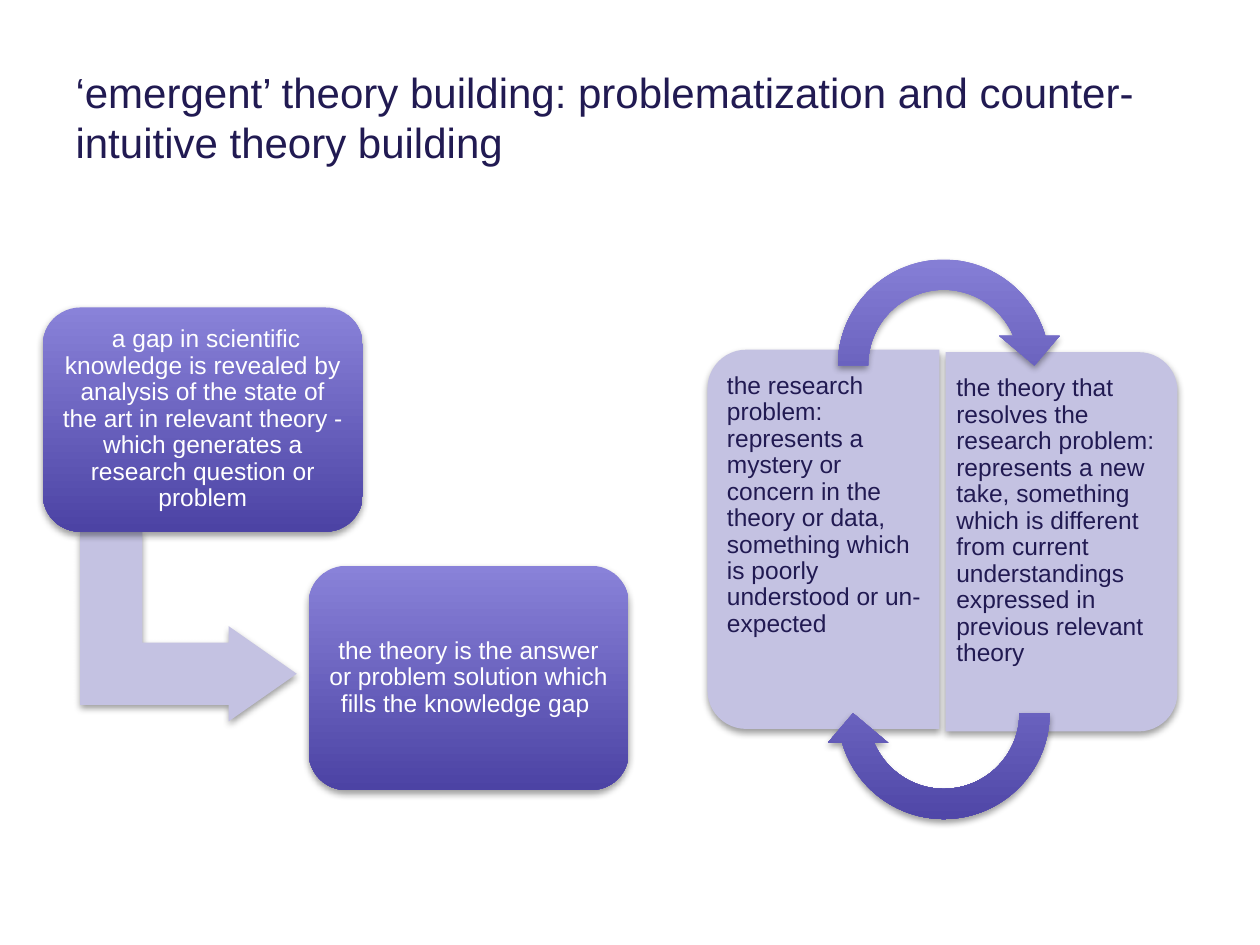
from dataclasses import dataclass

from lxml.etree import SubElement
from pptx import Presentation
from pptx.dml.color import RGBColor
from pptx.enum.shapes import MSO_SHAPE
from pptx.enum.text import MSO_ANCHOR, MSO_AUTO_SIZE, PP_ALIGN
from pptx.oxml.ns import qn
from pptx.shapes.autoshape import Shape
from pptx.slide import Slide
from pptx.text.text import TextFrame
from pptx.util import Inches, Pt

NAVY = RGBColor(0x21, 0x1A, 0x52)
WHITE = RGBColor(0xFF, 0xFF, 0xFF)
LAVENDER = RGBColor(0xC4, 0xC2, 0xE2)
LIGHT_VIOLET = RGBColor(0x89, 0x82, 0xD9)
DARK_VIOLET = RGBColor(0x4C, 0x43, 0xA4)

FONT = "Arial"
CORNER = 0.167
PANEL_LENGTH, PANEL_DEPTH = 3.01, 1.84
CYCLE_LEFT, CYCLE_SIZE = 6.53, 1.92
CYCLE_ADJUSTMENTS = (0.125, 11.423, 204.577, 108, 0.125)
CARD_WIDTH, CARD_HEIGHT, CARD_MARGIN = 2.54, 1.78, 0.09


@dataclass(frozen=True)
class Frame:
    left: float
    top: float
    width: float
    height: float

    def lengths(self) -> tuple:
        return tuple(map(Inches, (self.left, self.top, self.width, self.height)))


@dataclass(frozen=True)
class Panel:
    left: float
    top: float
    rotation: int
    text_left: float
    text_top: float
    inset_left: float
    inset_right: float
    text: str


@dataclass(frozen=True)
class Card:
    left: float
    top: float
    text: str


PANELS = (
    Panel(5.03, 3.36, 270, 5.71, 2.86, 0.06, 0.09,
          "the research problem: represents a mystery or concern in the theory "
          "or data, something which is poorly understood or un-expected"),
    Panel(6.92, 3.38, 90, 7.5, 2.88, 0.09, 0.06,
          "the theory that resolves the research problem: represents a new take, "
          "something which is different from current understandings expressed in "
          "previous relevant theory"),
)
CYCLE_ARROWS = ((1.94, 0), (4.7, 180))
CARDS = (
    Card(0.34, 2.44,
         " a gap in scientific knowledge is revealed by analysis of the state of "
         "the art in relevant theory - which generates a research question or problem"),
    Card(2.45, 4.49,
         "the theory is the answer or problem solution which fills the knowledge gap "),
)


def add_shadow(shape: Shape) -> None:
    shape.shadow.inherit = False
    effects = shape._element.spPr.find(qn("a:effectLst"))
    shadow = SubElement(effects, qn("a:outerShdw"), blurRad=str(Pt(4)), dist=str(Pt(2)),
                        dir="5400000", rotWithShape="0")
    color = SubElement(shadow, qn("a:srgbClr"), val="000000")
    SubElement(color, qn("a:alpha"), val="38000")


def add_figure(slide: Slide, kind: MSO_SHAPE, frame: Frame, adjustments: tuple,
               rotation: int = 0) -> Shape:
    shape = slide.shapes.add_shape(kind, *frame.lengths())
    for index, value in enumerate(adjustments):
        shape.adjustments[index] = value
    shape.rotation = rotation
    shape.line.fill.background()
    add_shadow(shape)
    return shape


def fill_solid(shape: Shape) -> None:
    shape.fill.solid()
    shape.fill.fore_color.rgb = LAVENDER


def fill_gradient(shape: Shape) -> None:
    shape.fill.gradient()
    shape.fill.gradient_angle = 270
    stops = zip(shape.fill.gradient_stops, (0, 1), (LIGHT_VIOLET, DARK_VIOLET))
    for stop, position, color in stops:
        stop.position = position
        stop.color.rgb = color
    shape._element.spPr.find(qn("a:gradFill")).set("rotWithShape", "0")


def write_text(text_frame: TextFrame, text: str, size: int, color: RGBColor,
               alignment: PP_ALIGN, anchor: MSO_ANCHOR) -> None:
    text_frame.word_wrap = True
    text_frame.auto_size = MSO_AUTO_SIZE.NONE
    text_frame.vertical_anchor = anchor
    para = text_frame.paragraphs[0]
    para.alignment = alignment
    span = para.add_run()
    span.text = text
    span.font.name = FONT
    span.font.size = Pt(size)
    span.font.color.rgb = color


def add_label(slide: Slide, frame: Frame, insets: tuple, text: str, color: RGBColor,
              alignment: PP_ALIGN, anchor: MSO_ANCHOR) -> None:
    text_frame = slide.shapes.add_textbox(*frame.lengths()).text_frame
    (text_frame.margin_left, text_frame.margin_top,
     text_frame.margin_right, text_frame.margin_bottom) = map(Inches, insets)
    write_text(text_frame, text, 14, color, alignment, anchor)
    text_frame.paragraphs[0].line_spacing = 0.9


def add_panel(slide: Slide, panel: Panel) -> None:
    frame = Frame(panel.left, panel.top, PANEL_LENGTH, PANEL_DEPTH)
    fill_solid(add_figure(slide, MSO_SHAPE.ROUND_2_SAME_RECTANGLE, frame,
                          (CORNER, 0), panel.rotation))
    add_label(slide, Frame(panel.text_left, panel.text_top, 1.75, 2.83),
              (panel.inset_left, 0.1, panel.inset_right, 0.1), panel.text,
              NAVY, PP_ALIGN.LEFT, MSO_ANCHOR.TOP)


def add_card(slide: Slide, card: Card) -> None:
    frame = Frame(card.left, card.top, CARD_WIDTH, CARD_HEIGHT)
    fill_gradient(add_figure(slide, MSO_SHAPE.ROUNDED_RECTANGLE, frame, (CORNER,)))
    text_area = Frame(card.left + CARD_MARGIN, card.top + CARD_MARGIN,
                      CARD_WIDTH - 2 * CARD_MARGIN, CARD_HEIGHT - 2 * CARD_MARGIN)
    add_label(slide, text_area, (0.06,) * 4, card.text,
              WHITE, PP_ALIGN.CENTER, MSO_ANCHOR.MIDDLE)


def add_title(slide: Slide) -> None:
    title = slide.shapes.title
    title.left, title.top, title.width, title.height = Frame(0.5, 0.3, 9, 1.25).lengths()
    write_text(title.text_frame,
               "‘emergent’ theory building: problematization and "
               "counter-intuitive theory building",
               24, NAVY, PP_ALIGN.LEFT, MSO_ANCHOR.MIDDLE)


def main() -> None:
    deck = Presentation()
    deck.slide_width, deck.slide_height = Inches(10), Inches(7.5)
    page = deck.slides.add_slide(deck.slide_layouts[5])
    add_title(page)
    for panel in PANELS:
        add_panel(page, panel)
    for top, rotation in CYCLE_ARROWS:
        frame = Frame(CYCLE_LEFT, top, CYCLE_SIZE, CYCLE_SIZE)
        fill_gradient(add_figure(page, MSO_SHAPE.CIRCULAR_ARROW, frame,
                                 CYCLE_ADJUSTMENTS, rotation))
    fill_solid(add_figure(page, MSO_SHAPE.BENT_UP_ARROW, Frame(0.74, 4.11, 1.51, 1.72),
                          (0.328, 0.25, 0.358), 90))
    for card in CARDS:
        add_card(page, card)
    deck.save("out.pptx")


if __name__ == "__main__":
    main()
